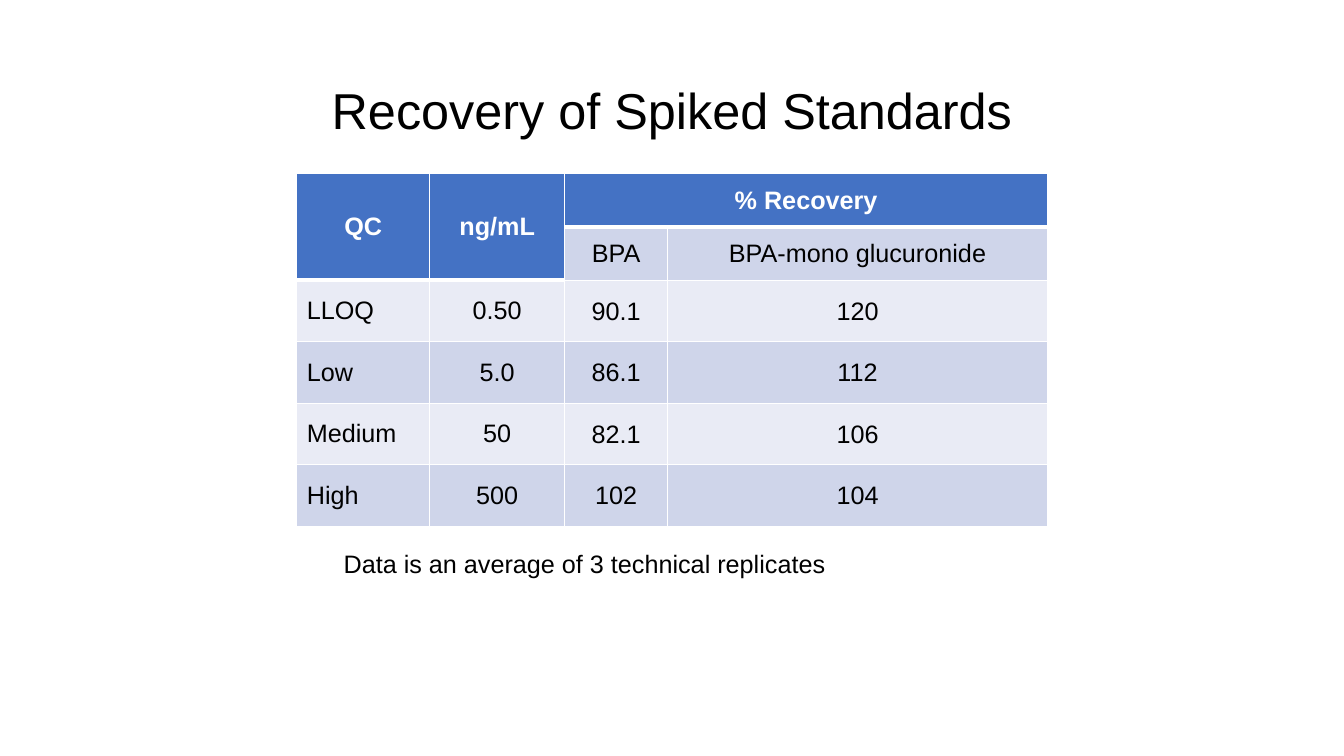
from lxml import etree
from pptx import Presentation
from pptx import util as u
from pptx.dml.color import RGBColor
from pptx.enum import text
from pptx.oxml.ns import qn

COLORS = {
    "heading": "4472C4",
    "dark_band": "CFD5EA",
    "light_band": "E9EBF5",
    "white": "FFFFFF",
    "black": "000000",
}
COLUMN_WIDTHS = [3.35, 3.4, 2.59, 9.58]
ROW_HEIGHTS = [1.34] * 2 + [1.55] * 4
RECOVERY = [
    ["QC", "ng/mL", "% Recovery", ""],
    ["", "", "BPA", "BPA-mono glucuronide"],
    ["LLOQ", "0.50", "90.1", "120"],
    ["Low", "5.0", "86.1", "112"],
    ["Medium", "50", "82.1", "106"],
    ["High", "500", "102", "104"],
]


def write(frame, words, size=18, color="black", bold=False, align="CENTER", spacing=1.0):
    paragraph = frame.paragraphs[0]
    paragraph.alignment = getattr(text.PP_ALIGN, align)
    paragraph.line_spacing = spacing
    run = paragraph.add_run()
    run.text = words
    run.font.name = "Arial"
    run.font.size = u.Pt(size)
    run.font.bold = bold
    run.font.color.rgb = RGBColor.from_string(COLORS[color])


def add_label(slide, box, words, anchor="TOP", wrap=True, **style):
    frame = slide.shapes.add_textbox(*map(u.Cm, box)).text_frame
    frame.word_wrap = wrap
    frame.vertical_anchor = getattr(text.MSO_ANCHOR, anchor)
    write(frame, words, **style)


def is_heading(row, column):
    return row == 0 or (row == 1 and column < 2)


def set_borders(cell, **widths):
    properties = cell._tc.get_or_add_tcPr()
    for side in ("L", "R", "T", "B"):
        line = etree.SubElement(properties, qn(f"a:ln{side}"), w=str(u.Pt(widths.get(side, 1))))
        fill = etree.SubElement(line, qn("a:solidFill"))
        etree.SubElement(fill, qn("a:srgbClr"), val=COLORS["white"])


def format_cell(cell, row, column):
    heading = is_heading(row, column)
    below_heading = row > 0 and is_heading(row - 1, column)
    set_borders(cell, T=3 if below_heading else 1, B=3 if heading else 1)
    band = "heading" if heading else "dark_band" if row % 2 else "light_band"
    cell.fill.solid()
    cell.fill.fore_color.rgb = RGBColor.from_string(COLORS[band])
    cell.vertical_anchor = text.MSO_ANCHOR.MIDDLE
    if row > 1 and column > 1:
        cell.margin_left = cell.margin_right = cell.margin_top = u.Cm(0.03)
        cell.margin_bottom = 0
    if RECOVERY[row][column]:
        write(cell.text_frame, RECOVERY[row][column], bold=heading,
              color="white" if heading else "black",
              align="LEFT" if row > 1 and column == 0 else "CENTER")


def add_recovery_table(slide, left, top):
    size = (sum(COLUMN_WIDTHS), sum(ROW_HEIGHTS))
    table = slide.shapes.add_table(
        len(ROW_HEIGHTS), len(COLUMN_WIDTHS), *map(u.Cm, (left, top, *size))).table
    for column, width in zip(table.columns, COLUMN_WIDTHS):
        column.width = u.Cm(width)
    for row, height in zip(table.rows, ROW_HEIGHTS):
        row.height = u.Cm(height)
    for row in range(len(ROW_HEIGHTS)):
        for column in range(len(COLUMN_WIDTHS)):
            format_cell(table.cell(row, column), row, column)
    for start, end in [((0, 0), (1, 0)), ((0, 1), (1, 1)), ((0, 2), (0, 3))]:
        table.cell(*start).merge(table.cell(*end))


def build_recovery_slide(slide, left, top, width):
    add_label(slide, (left + 2.33, top + 1.01, width - 4.66, 3.68),
              "Recovery of Spiked Standards", anchor="MIDDLE", size=36, spacing=0.9)
    add_recovery_table(slide, left + 7.48, top + 4.38)
    add_label(slide, (left + 8.41, top + 13.69, 12.78, 1.02),
              "Data is an average of 3 technical replicates", wrap=False, align="LEFT")


def main():
    deck = Presentation()
    deck.slide_width, deck.slide_height = u.Cm(33.87), u.Cm(19.05)
    slide = deck.slides.add_slide(deck.slide_layouts[6])
    build_recovery_slide(slide, 0, 0, 33.87)
    deck.save("out.pptx")


if __name__ == "__main__":
    main()
